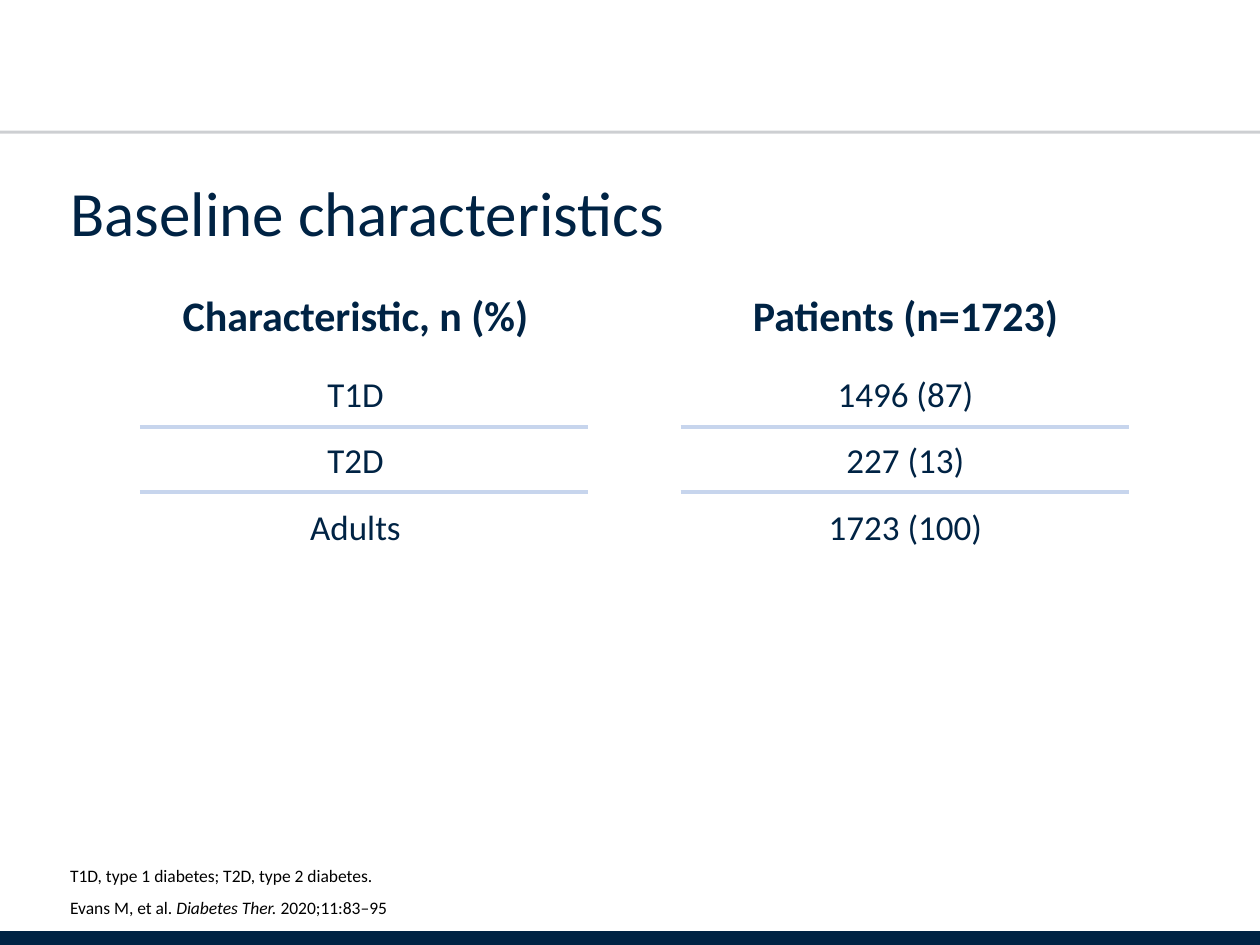
"""Build the baseline characteristics slide."""
from dataclasses import dataclass

from lxml.etree import SubElement
from pptx import Presentation
from pptx.dml.color import RGBColor as RGB
from pptx.enum.shapes import MSO_CONNECTOR as CONN
from pptx.enum.text import MSO_ANCHOR as ANCHOR, PP_ALIGN as ALIGN
from pptx.oxml.ns import qn
from pptx.util import Pt


@dataclass(frozen=True)
class Theme:
    font: str = "Calibri"
    navy: RGB = RGB(0x00, 0x23, 0x44)
    grey: RGB = RGB(0x9D, 0xA1, 0xA6)
    pale: RGB = RGB(0xC7, 0xD5, 0xED)
    white: RGB = RGB(0xFF, 0xFF, 0xFF)
    black: RGB = RGB(0x00, 0x00, 0x00)
    title: int = 36
    head: int = 24
    body: int = 20
    note: int = 10


T = Theme()
HEADER = ("Characteristic, n (%)", "Patients (n=1723)")
ROWS = (("T1D", "1496 (87)"), ("T2D", "227 (13)"), ("Adults", "1723 (100)"))
ROW_COUNT = 7
NOTES = (
    (("T1D, type 1 diabetes; T2D, type 2 diabetes.", False),),
    (("Evans M, et al. ", False), ("Diabetes Ther. ", True), ("2020;11:83–95", False)),
)


def apply(obj, **values):
    for name, value in values.items():
        setattr(obj, name, value)


def add_run(p, text, size, color, **style):
    r = p.add_run()
    r.text = text
    apply(r.font, name=T.font, size=Pt(size), **style)
    r.font.color.rgb = color


def add_rule(s, x1, x2, y, color, width, alpha=None):
    line = s.shapes.add_connector(CONN.STRAIGHT, Pt(x1), Pt(y), Pt(x2), Pt(y))
    line.line.color.rgb = color
    line.line.width = Pt(width)
    sp_pr = line._element.spPr
    if alpha is not None:
        srgb = sp_pr.find(f".//{qn('a:srgbClr')}")
        SubElement(srgb, qn("a:alpha"), val=str(alpha * 1000))
    SubElement(sp_pr, qn("a:effectLst"))


def add_title(s, text):
    sp = s.shapes.title
    apply(sp, left=Pt(33), top=Pt(90), width=Pt(657), height=Pt(53))
    tf = sp.text_frame
    apply(tf, vertical_anchor=ANCHOR.BOTTOM, word_wrap=True, margin_bottom=0)
    p = tf.paragraphs[0]
    apply(p, alignment=ALIGN.LEFT, line_spacing=0.9)
    add_run(p, text, T.title, T.navy)


def add_notes(s):
    tf = s.shapes.add_textbox(Pt(33), Pt(506), Pt(657), Pt(22)).text_frame
    apply(tf, vertical_anchor=ANCHOR.BOTTOM, word_wrap=True)
    for i, runs in enumerate(NOTES):
        p = tf.add_paragraph() if i else tf.paragraphs[0]
        p.space_after = Pt(6)
        for text, italic in runs:
            add_run(p, text, T.note, T.black, italic=italic)


def style_cell(cell, bottom):
    tc_pr = cell._tc.get_or_add_tcPr()
    for side, width in (("L", 1), ("R", 1), ("T", 1), ("B", bottom)):
        ln = SubElement(tc_pr, qn(f"a:ln{side}"), w=str(Pt(width)))
        fill = SubElement(ln, qn("a:solidFill"))
        SubElement(fill, qn("a:srgbClr"), val=str(T.white))
    cell.fill.solid()
    cell.fill.fore_color.rgb = T.white


def add_table(s):
    table = s.shapes.add_table(
        ROW_COUNT, 2, Pt(46), Pt(163), Pt(628.6), Pt(274)).table
    for i, row in enumerate(table.rows):
        row.height = Pt(38 if i else 44)
        for cell in row.cells:
            style_cell(cell, 1 if i else 3)
    for i, texts in enumerate((HEADER, *ROWS)):
        for j, text in enumerate(texts):
            cell = table.cell(i, j)
            cell.vertical_anchor = ANCHOR.MIDDLE if i else ANCHOR.TOP
            p = cell.text_frame.paragraphs[0]
            apply(p, alignment=ALIGN.CENTER, space_after=Pt(0 if i else 6))
            add_run(p, text, T.body if i else T.head, T.navy, bold=i == 0)


def main():
    prs = Presentation()
    apply(prs, slide_width=Pt(720), slide_height=Pt(540))
    s = prs.slides.add_slide(prs.slide_layouts[5])
    add_rule(s, 0, 720, 537, T.navy, 10)
    add_rule(s, 0, 720, 75.5, T.grey, 1.75, alpha=50)
    add_title(s, "Baseline characteristics")
    add_notes(s)
    add_table(s)
    for x in (80, 389):
        for y in (244, 281):
            add_rule(s, x, x + 256, y, T.pale, 2)
    prs.save("out.pptx")


if __name__ == "__main__":
    main()
